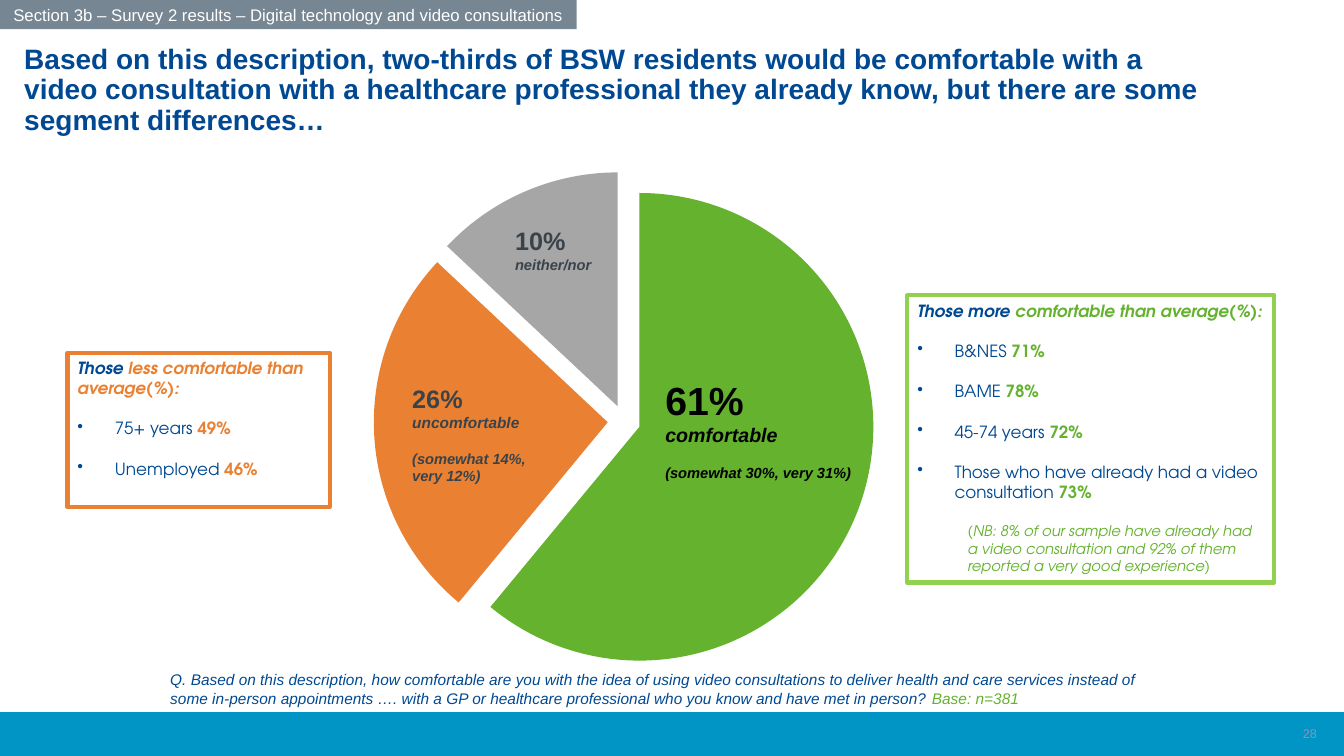
from lxml.etree import SubElement
from pptx import Presentation
from pptx.chart.data import CategoryChartData
from pptx.dml.color import RGBColor
from pptx.enum.chart import XL_CHART_TYPE as ChartType
from pptx.enum.shapes import MSO_SHAPE as Shape
from pptx.enum.text import MSO_ANCHOR as Anchor, MSO_AUTO_SIZE as AutoSize, PP_ALIGN as Align
from pptx.oxml import parse_xml
from pptx.oxml.ns import nsdecls, qn
from pptx.util import Inches, Pt

COLORS = {
    "navy": "004992", "blue": "0095C4", "slate": "768692", "white": "FFFFFF",
    "black": "000000", "charcoal": "3A434A", "number": "8C95B6", "grey": "A6A6A6",
    "green": "64B22D", "base": "65B22E", "lime": "92D050", "orange": "EA8132",
}
SANS, GEOMETRIC = "Arial", "TeX Gyre Adventor"


def rgb(name):
    return RGBColor.from_string(COLORS[name])


def write(paragraph, text, size=12, color="navy", bold=False, italic=False, font=SANS):
    run = paragraph.add_run()
    run.text = text
    run.font.name, run.font.size = font, Pt(size)
    run.font.bold, run.font.italic = bold, italic
    run.font.color.rgb = rgb(color)


class SurveySlide:
    """Holds the house style and the slide being built."""

    def __init__(self, deck):
        self.slide = deck.slides.add_slide(deck.slide_layouts[5])

    def place(self, item, left, top, width, height):
        item.left, item.top = Inches(left), Inches(top)
        item.width, item.height = Inches(width), Inches(height)

    def frame(self, item, anchor=Anchor.TOP, wrap=True):
        frame = item.text_frame
        frame.auto_size = AutoSize.NONE
        frame.word_wrap, frame.vertical_anchor = wrap, anchor
        return frame

    def title(self, text, *box):
        heading = self.slide.shapes.title
        self.place(heading, *box)
        frame = self.frame(heading)
        frame.margin_left = frame.margin_right = Inches(0.24)
        paragraph = frame.paragraphs[0]
        paragraph.alignment, paragraph.line_spacing = Align.LEFT, 0.9
        write(paragraph, text, size=20, bold=True)

    def panel(self, *box, fill=None, line=None, weight=1):
        panel = self.slide.shapes.add_shape(Shape.RECTANGLE, *map(Inches, box))
        panel.shadow.inherit = False
        if fill:
            panel.fill.solid()
            panel.fill.fore_color.rgb = rgb(fill)
        else:
            panel.fill.background()
        if line:
            panel.line.color.rgb = rgb(line)
            panel.line.width = Pt(weight)
        else:
            panel.line.fill.background()
        return panel

    def textbox(self, *box, anchor=Anchor.TOP, wrap=True):
        return self.frame(self.slide.shapes.add_textbox(*map(Inches, box)), anchor, wrap)

    def pie(self, values, fills, *box):
        data = CategoryChartData()
        data.categories = [str(number + 1) for number in range(len(values))]
        data.add_series("Series 1", values)
        chart = self.slide.shapes.add_chart(ChartType.PIE, *map(Inches, box), data).chart
        chart.has_legend = chart.has_title = False
        chart.font.name, chart.font.size = SANS, Pt(10)
        chart.font.color.rgb = rgb("navy")
        plot = chart.plots[0]
        plot.vary_by_categories = True
        series = plot.series[0]
        for index, fill in enumerate(fills):
            slice_fill = series.points[index].format.fill
            slice_fill.solid()
            slice_fill.fore_color.rgb = rgb(fill)
        explosion = parse_xml(f'<c:explosion {nsdecls("c")} val="7"/>')
        series._element.find(qn("c:tx")).addnext(explosion)

    def slice_label(self, lines, color, *box):
        frame = self.textbox(*box, wrap=False)
        for index, (text, size, gap) in enumerate(lines):
            paragraph = frame.paragraphs[0] if index == 0 else frame.add_paragraph()
            if gap:
                paragraph.space_before = Pt(gap)
            write(paragraph, text, size=size, color=color, bold=True, italic=index > 0)

    def segments(self, lead, rest, accent, border, groups, *box, note=None):
        frame = self.frame(self.panel(*box, line=border, weight=3))
        heading = frame.paragraphs[0]
        heading.alignment = Align.LEFT
        strong = {"bold": True, "font": GEOMETRIC}
        write(heading, lead, italic=True, **strong)
        write(heading, rest, color=accent, italic=True, **strong)
        for group, share in groups:
            bullet = self.spaced(frame, 0.37, -0.37)
            SubElement(bullet._p.get_or_add_pPr(), qn("a:buChar"), char="•")
            write(bullet, group + " ", font=GEOMETRIC)
            write(bullet, share, color=accent, **strong)
        if note:
            write(self.spaced(frame, 0.5, 0), note, size=10.5, color=accent,
                  italic=True, font=GEOMETRIC)

    def spaced(self, frame, margin, indent):
        paragraph = frame.add_paragraph()
        paragraph.alignment, paragraph.space_before = Align.LEFT, Pt(14.4)
        properties = paragraph._p.get_or_add_pPr()
        properties.set("marL", str(Inches(margin)))
        properties.set("indent", str(Inches(indent)))
        return paragraph


def main():
    deck = Presentation()
    deck.slide_width, deck.slide_height = Inches(13.33), Inches(7.5)
    survey = SurveySlide(deck)

    survey.panel(0, 7.07, 13.33, 0.43, fill="blue", line="blue")
    survey.pie((61, 26, 13), ("green", "orange", "grey"), 2.08, 1.56, 8.22, 5.24)
    page = survey.textbox(10.16, 7.08, 3, 0.4, anchor=Anchor.MIDDLE).paragraphs[0]
    page.alignment = Align.RIGHT
    write(page, "28", size=9, color="number")

    banner = survey.panel(0, 0, 5.72, 0.29, fill="slate")
    section = survey.frame(banner, Anchor.MIDDLE).paragraphs[0]
    section.alignment = Align.CENTER
    write(section, "Section 3b – Survey 2 results – Digital technology and video consultations",
          color="white")
    survey.title("Based on this description, two-thirds of BSW residents would be comfortable "
                 "with a video consultation with a healthcare professional they already know, "
                 "but there are some segment differences…", 0, 0.4, 12.25, 1.13)

    survey.slice_label([("61%", 28, 0), ("comfortable", 14, 0),
                        ("(somewhat 30%, very 31%)", 10.5, 12.65)],
                       "black", 6.5, 3.68, 2.08, 1.17)
    survey.slice_label([("26%", 18, 0), ("uncomfortable", 11, 0),
                        ("(somewhat 14%,", 10.5, 12.65), ("very 12%)", 10.5, 0)],
                       "charcoal", 3.99, 3.75, 1.39, 1.13)
    survey.slice_label([("10%", 18, 0), ("neither/nor", 10.5, 0)],
                       "charcoal", 5.01, 2.19, 0.97, 0.58)

    survey.segments("Those more ", "comfortable than average(%):", "green", "lime",
                    [("B&NES", "71%"), ("BAME", "78%"), ("45-74 years", "72%"),
                     ("Those who have already had a video consultation", "73%")],
                    9, 2.93, 3.64, 2.85,
                    note="(NB: 8% of our sample have already had a video consultation and "
                         "92% of them reported a very good experience)")
    survey.segments("Those ", "less comfortable than average(%):", "orange", "orange",
                    [("75+ years", "49%"), ("Unemployed", "46%")], 0.67, 3.5, 2.6, 1.53)

    question = survey.textbox(1.59, 6.6, 10.16, 0.47).paragraphs[0]
    write(question, "Q. Based on this description, how comfortable are you with the idea of "
          "using video consultations to deliver health and care services instead of some "
          "in-person appointments …. with a GP or healthcare professional who you know and "
          "have met in person? ", size=11, italic=True)
    write(question, "Base: n=381", size=11, color="base", italic=True)

    deck.save("out.pptx")


if __name__ == "__main__":
    main()
